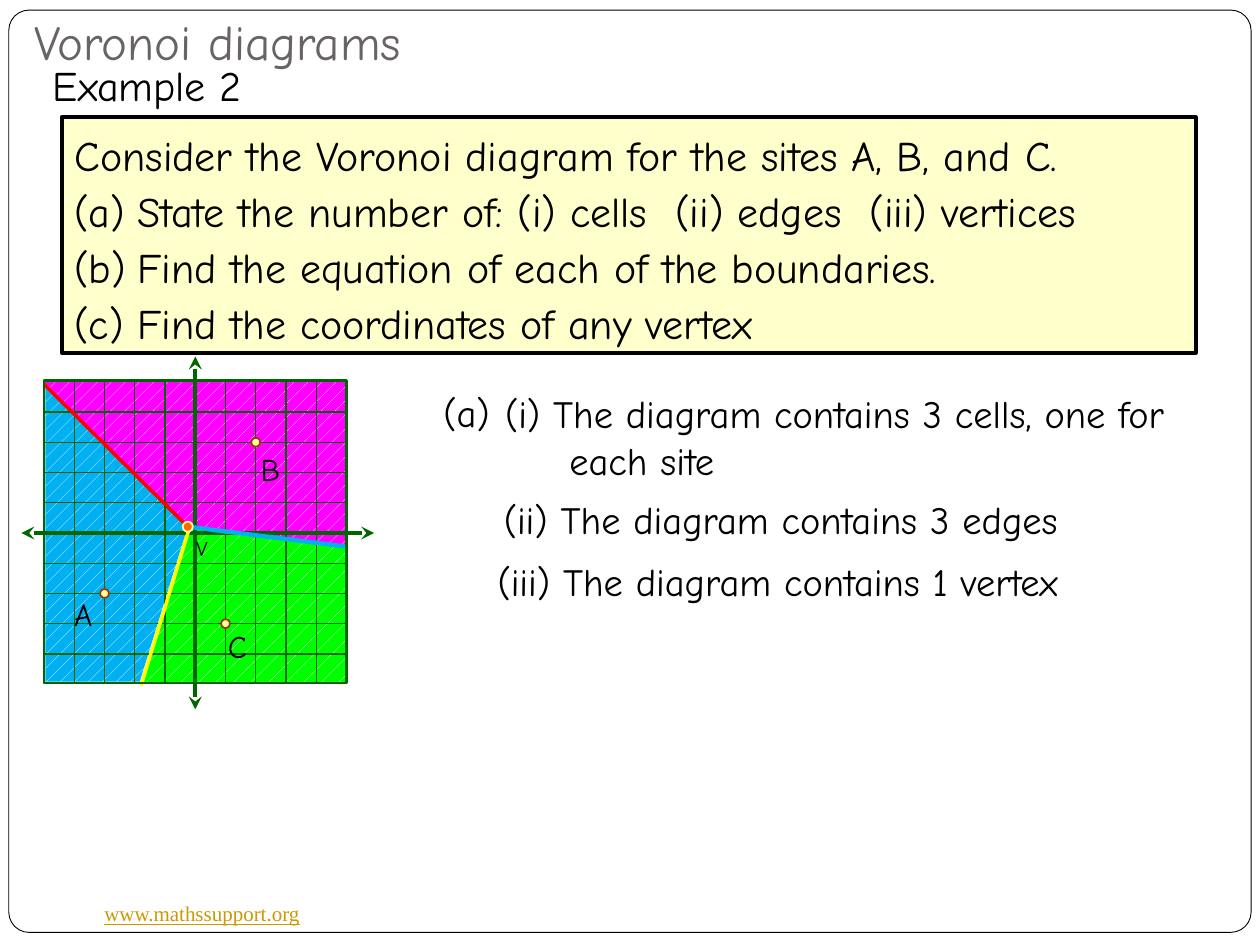
from dataclasses import dataclass

import pptx
import pptx.dml.color
import pptx.enum.dml
import pptx.enum.shapes
import pptx.enum.text
import pptx.oxml.ns
import pptx.util
from lxml import etree

Inches, Pt = pptx.util.Inches, pptx.util.Pt
SHAPE = pptx.enum.shapes.MSO_SHAPE
ANCHOR = pptx.enum.text.MSO_ANCHOR
AUTO = pptx.enum.text.MSO_AUTO_SIZE
PATTERN = pptx.enum.dml.MSO_PATTERN
FONT = "Comic Neue"
GREEN = "006600"
BLACK = "000000"
STEP, ORIGIN_X, ORIGIN_Y = 0.24, 1.55, 4.23
LEFT, RIGHT, TOP, BOTTOM = 0.35, 2.75, 3.03, 5.43
VERTEX = (1.49, 4.18)


@dataclass
class Label:
    text: str
    x: float
    y: float
    w: float
    h: float
    size: float
    hanging: float = 0


@dataclass
class Cell:
    points: list[tuple[float, float]]
    color: str
    pattern: PATTERN


@dataclass
class Line:
    start: tuple[float, float]
    end: tuple[float, float]
    color: str
    width: float
    arrows: bool = False


LABELS = [
    Label("Example 2", 0.32, 0.42, 2.02, 0.5, 24),
    Label("(a)", 3.42, 3.04, 0.72, 0.47, 22),
    Label("(i) The diagram contains 3 cells, one for each site",
          3.91, 3.05, 6.01, 0.84, 22, 0.51),
    Label("(ii) The diagram contains 3 edges", 3.9, 3.89, 5.74, 0.47, 22),
    Label("(iii) The diagram contains 1 vertex", 3.85, 4.38, 5.95, 0.47, 22),
    Label("A", 0.49, 4.67, 0.45, 0.4, 18),
    Label("B", 1.97, 3.52, 0.45, 0.4, 18),
    Label("C", 1.71, 4.93, 0.45, 0.4, 18),
    Label("V", 1.46, 4.2, 0.45, 0.3, 12),
]
CELLS = [
    Cell([(0.36, 3.08), VERTEX, (1.11, 5.41), (0.36, 5.41)], "00B0F0", PATTERN.PERCENT_10),
    Cell([(2.74, 3.03), (2.75, 4.33), VERTEX, (0.34, 3.02)], "FF00FF", PATTERN.PERCENT_10),
    Cell([(1.14, 5.42), (2.74, 5.42), (2.74, 4.34), VERTEX], "00FE00", PATTERN.PERCENT_5),
]
EDGES = [
    Line((1.12, 5.44), (1.51, 4.17), "FEFE02", 2),
    Line((2.76, 4.34), VERTEX, "00B0F0", 2.5),
    Line(VERTEX, (0.35, 3.05), "FF0000", 2),
]
SITES = [(-3, -2), (2, 3), (1, -3)]
QUESTION = [
    "Consider the Voronoi diagram for the sites A, B, and C.",
    "State the number of: (i) cells  (ii) edges  (iii) vertices",
    "Find the equation of each of the boundaries.",
    "Find the coordinates of any vertex",
]


def rgb(value: str):
    return pptx.dml.color.RGBColor.from_string(value)


def set_all(obj, values: dict) -> None:
    for name, value in values.items():
        setattr(obj, name, value)


def place(sp, x: float, y: float, w: float, h: float) -> None:
    set_all(sp, dict(left=Inches(x), top=Inches(y), width=Inches(w), height=Inches(h)))


def style_font(r, size: float, color: str = BLACK, name: str = FONT, underline=None) -> None:
    set_all(r.font, dict(size=Pt(size), name=name, underline=underline))
    r.font.color.rgb = rgb(color)


def hang(p, left: float) -> None:
    pPr = p._p.get_or_add_pPr()
    pPr.set("marL", str(Inches(left)))
    pPr.set("indent", str(-Inches(left)))


def add_bullet(p, tag: str, **attrs: str) -> None:
    etree.SubElement(p._p.get_or_add_pPr(), pptx.oxml.ns.qn(tag), attrs)


def outline(sp, fill: str | None, line: str, width: float) -> None:
    if fill:
        sp.fill.solid()
        sp.fill.fore_color.rgb = rgb(fill)
    else:
        sp.fill.background()
    sp.line.color.rgb = rgb(line)
    sp.line.width = Pt(width)


def draw_shape(s, kind, box: tuple, fill: str | None, line: str, width: float):
    sp = s.shapes.add_shape(kind, *map(Inches, box))
    sp.shadow.inherit = False
    outline(sp, fill, line, width)
    return sp


def draw_dot(s, x: float, y: float, size: float, fill: str, line: str) -> None:
    draw_shape(s, SHAPE.OVAL, (x - size / 2, y - size / 2, size, size), fill, line, 1)


def draw_text(s, label: Label, wrap: bool = True, **font) -> None:
    sp = s.shapes.add_textbox(*map(Inches, (label.x, label.y, label.w, label.h)))
    tf = sp.text_frame
    set_all(tf, dict(word_wrap=wrap, auto_size=AUTO.SHAPE_TO_FIT_TEXT))
    p = tf.paragraphs[0]
    if label.hanging:
        hang(p, label.hanging)
    r = p.add_run()
    r.text = label.text
    style_font(r, label.size, **font)


def draw_cell(s, cell: Cell) -> None:
    points = [(Inches(x), Inches(y)) for x, y in cell.points]
    builder = s.shapes.build_freeform(*points[0])
    builder.add_line_segments(points[1:], close=True)
    sp = builder.convert_to_shape()
    sp.shadow.inherit = False
    sp.fill.patterned()
    sp.fill.pattern = cell.pattern
    sp.fill.fore_color.rgb = rgb("F0FFFF")
    sp.fill.back_color.rgb = rgb(cell.color)
    sp.line.fill.background()


def draw_line(s, line: Line) -> None:
    sp = s.shapes.add_connector(pptx.enum.shapes.MSO_CONNECTOR.STRAIGHT,
                                *map(Inches, line.start + line.end))
    sp.line.color.rgb = rgb(line.color)
    sp.line.width = Pt(line.width)
    if line.arrows:
        for tag in ("a:headEnd", "a:tailEnd"):
            etree.SubElement(sp.line._get_or_add_ln(), pptx.oxml.ns.qn(tag), type="stealth")
    etree.SubElement(sp._element.spPr, pptx.oxml.ns.qn("a:effectLst"))


def draw_grid(s) -> None:
    for i in [i for i in range(-4, 5) if i]:
        x, y = ORIGIN_X + i * STEP, ORIGIN_Y + i * STEP
        draw_line(s, Line((LEFT, y), (RIGHT, y), GREEN, 0.75))
        draw_line(s, Line((x, TOP), (x, BOTTOM), GREEN, 0.75))
    draw_line(s, Line((0.17, ORIGIN_Y), (2.97, ORIGIN_Y), GREEN, 2.5, True))
    draw_line(s, Line((ORIGIN_X, 2.83), (ORIGIN_X, 5.63), GREEN, 2.5, True))


def fill_title(sp) -> None:
    place(sp, 0.27, 0.1, 9, 0.46)
    tf = sp.text_frame
    set_all(tf, dict(text="Voronoi diagrams", vertical_anchor=ANCHOR.BOTTOM,
                     auto_size=AUTO.NONE, margin_left=0, margin_top=Inches(0.05),
                     margin_right=0, margin_bottom=0))
    tf.paragraphs[0].alignment = pptx.enum.text.PP_ALIGN.LEFT
    style_font(tf.paragraphs[0].runs[0], 28, "696464")


def fill_question(sp) -> None:
    place(sp, 0.49, 0.93, 9, 1.87)
    outline(sp, "FFFFCC", BLACK, 2.25)
    tf = sp.text_frame
    set_all(tf, dict(text="\n".join(QUESTION), auto_size=AUTO.NONE, vertical_anchor=ANCHOR.TOP))
    for i, p in enumerate(tf.paragraphs):
        set_all(p, dict(line_spacing=Pt(32), space_before=Pt(0)))
        hang(p, 0.5 if i else 0)
        if i:
            add_bullet(p, "a:buFont", typeface=FONT)
            add_bullet(p, "a:buAutoNum", type="alphaLcParenBoth")
        else:
            add_bullet(p, "a:buNone")
        style_font(p.runs[0], 24)


def main() -> None:
    prs = pptx.Presentation()
    set_all(prs, dict(slide_width=Inches(10), slide_height=Inches(7.5)))
    s = prs.slides.add_slide(prs.slide_layouts[1])
    title, body = s.placeholders
    frame = draw_shape(s, SHAPE.ROUNDED_RECTANGLE, (0.07, 0.08, 9.86, 7.32), "FFFFFF", BLACK, 0.5)
    frame.adjustments[0] = 0.022
    title._element.addprevious(frame._element)
    fill_title(title)
    fill_question(body)
    draw_text(s, Label("www.mathssupport.org", 0.73, 7.1, 1.77, 0.3, 12), wrap=False,
              color="CC9900", name="Times New Roman", underline=True)
    square = (LEFT, 3.02, 2.4, 2.4)
    draw_shape(s, SHAPE.RECTANGLE, square, "F0FFFF", GREEN, 1)
    for cell in CELLS:
        draw_cell(s, cell)
    draw_grid(s)
    for x, y in SITES:
        draw_dot(s, ORIGIN_X + x * STEP, ORIGIN_Y - y * STEP, 0.07, "FFFF99", "9C3511")
    for edge in EDGES:
        draw_line(s, edge)
    draw_shape(s, SHAPE.RECTANGLE, square, None, GREEN, 1.5)
    draw_dot(s, *VERTEX, 0.08, "FF6600", "FFFF99")
    for label in LABELS:
        draw_text(s, label)
    prs.save("out.pptx")


if __name__ == "__main__":
    main()
